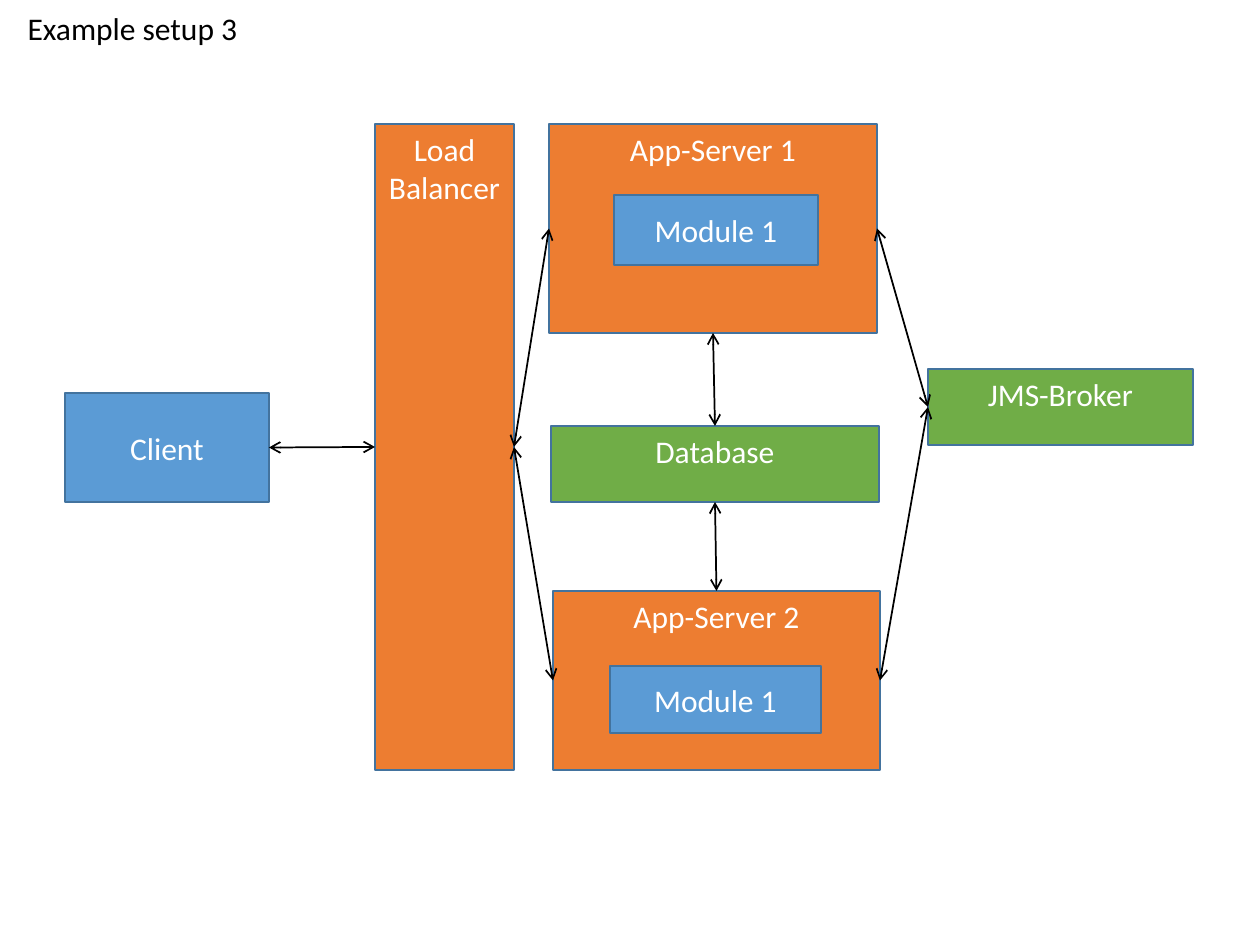
from lxml import etree
from pptx import Presentation, util as u
from pptx.dml.color import RGBColor
from pptx.enum import shapes, text
from pptx.oxml import ns

PX_PER_INCH = 126
BLUE = RGBColor(0x5B, 0x9B, 0xD5)
ORANGE = RGBColor(0xED, 0x7D, 0x31)
GREEN = RGBColor(0x70, 0xAD, 0x47)
OUTLINE = RGBColor(0x43, 0x73, 0x9E)
WHITE = RGBColor(0xFF, 0xFF, 0xFF)
BLACK = RGBColor(0x00, 0x00, 0x00)
TOP, LEFT, BOTTOM, RIGHT = range(4)


def px(length):
    return u.Emu(length * u.Inches(1) // PX_PER_INCH)


def write_text(holder, words, color=WHITE, size=18, anchor=text.MSO_ANCHOR.TOP,
               spacing=None):
    frame = holder.text_frame
    frame.word_wrap = True
    frame.auto_size = text.MSO_AUTO_SIZE.NONE
    frame.vertical_anchor = anchor
    paragraph = frame.paragraphs[0]
    paragraph.alignment = text.PP_ALIGN.CENTER
    paragraph.line_spacing = spacing
    run = paragraph.add_run()
    run.text = words
    run.font.name = "Calibri"
    run.font.size = u.Pt(size)
    run.font.color.rgb = color


def add_title(slide, words, left, top, width, height):
    title = slide.shapes.title
    title.left, title.top = px(left), px(top)
    title.width, title.height = px(width), px(height)
    write_text(title, words, color=BLACK, anchor=text.MSO_ANCHOR.BOTTOM, spacing=0.9)


def add_box(parent, words, fill, left, top, width, height, **text_format):
    box = parent.shapes.add_shape(shapes.MSO_SHAPE.RECTANGLE,
                                  px(left), px(top), px(width), px(height))
    box.shadow.inherit = False
    box.fill.solid()
    box.fill.fore_color.rgb = fill
    box.line.color.rgb = OUTLINE
    box.line.width = u.Pt(1)
    write_text(box, words, **text_format)
    return box


def add_server(slide, words, server_area, module_area):
    group = slide.shapes.add_group_shape()
    server = add_box(group, words, ORANGE, *server_area)
    add_box(group, "Module 1", BLUE, *module_area, anchor=text.MSO_ANCHOR.MIDDLE)
    return server


def link(slide, start, start_side, end, end_side):
    arrow = slide.shapes.add_connector(shapes.MSO_CONNECTOR.STRAIGHT, 0, 0, 0, 0)
    arrow.begin_connect(start, start_side)
    arrow.end_connect(end, end_side)
    arrow.line.color.rgb = BLACK
    arrow.line.width = u.Pt(1)
    outline = arrow.line._get_or_add_ln()
    for tag in ("a:headEnd", "a:tailEnd"):
        etree.SubElement(outline, ns.qn(tag), type="arrow")
    etree.SubElement(arrow._element.spPr, ns.qn("a:effectLst"))


def main():
    deck = Presentation()
    deck.slide_width, deck.slide_height = px(1260), px(945)
    slide = deck.slides.add_slide(deck.slide_layouts[0])
    subtitle = slide.placeholders[1].element
    subtitle.getparent().remove(subtitle)
    add_title(slide, "Example setup 3", -4, 6, 273, 48)

    server_1 = add_server(slide, "App-Server 1", (549, 124, 328, 209), (614, 195, 204, 70))
    server_2 = add_server(slide, "App-Server 2", (553, 591, 327, 179), (610, 666, 211, 67))
    broker = add_box(slide, "JMS-Broker", GREEN, 928, 369, 265, 76)
    database = add_box(slide, "Database", GREEN, 551, 426, 328, 76)
    balancer = add_box(slide, "Load Balancer", ORANGE, 375, 124, 139, 646)
    client = add_box(slide, "Client", BLUE, 65, 393, 204, 109,
                     anchor=text.MSO_ANCHOR.MIDDLE)

    for server in (server_1, server_2):
        link(slide, broker, LEFT, server, RIGHT)
        link(slide, server, LEFT, balancer, RIGHT)
    link(slide, server_1, BOTTOM, database, TOP)
    link(slide, database, BOTTOM, server_2, TOP)
    link(slide, balancer, LEFT, client, RIGHT)

    deck.save("out.pptx")


if __name__ == "__main__":
    main()
